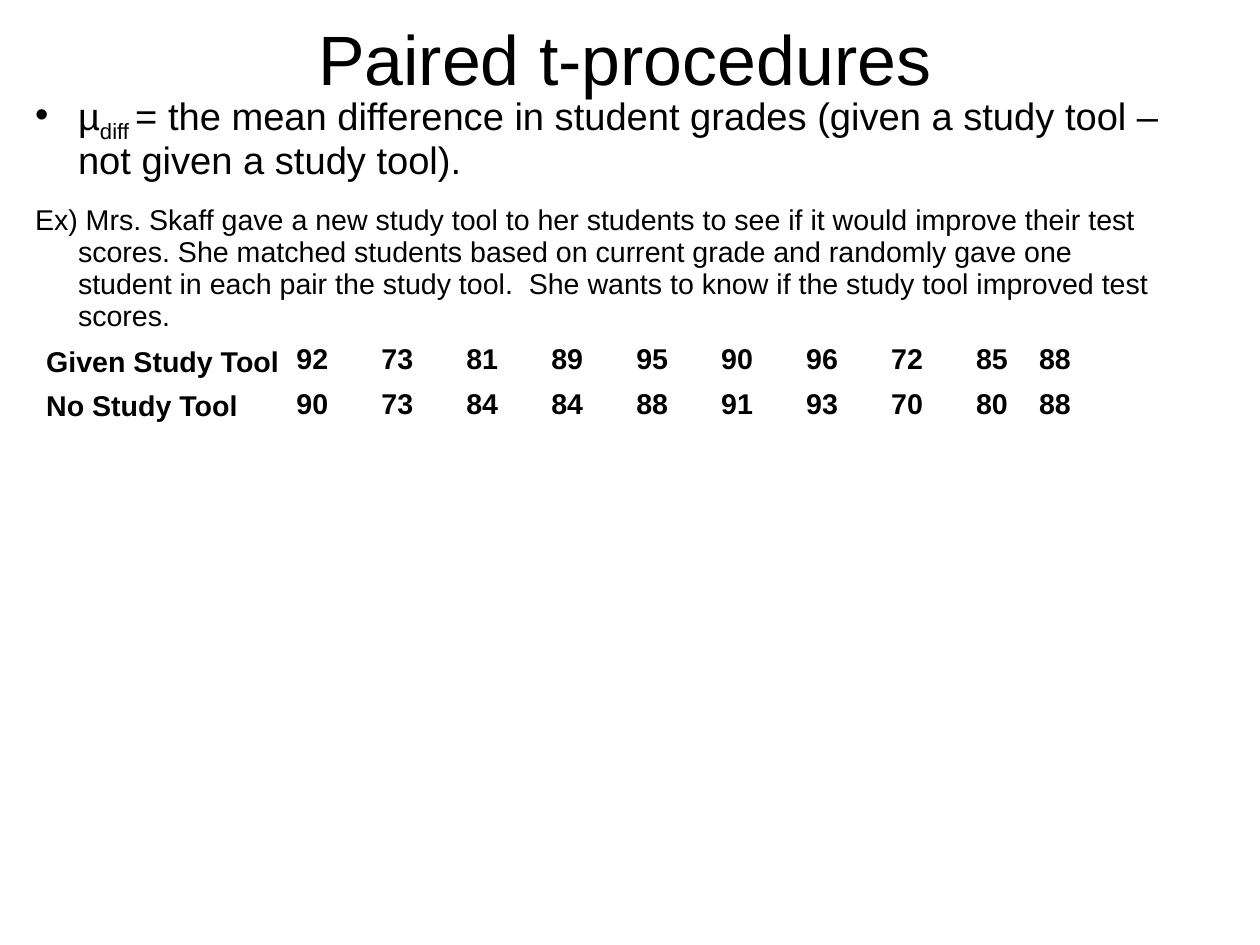
import pptx
import pptx.dml.color
import pptx.enum.text
import pptx.oxml.ns
import pptx.util
import lxml.etree

FONT = "Arial"
BLACK = "000000"
WHITE = "FFFFFF"
LINE_SPACING = 0.93
SCORES = [
    [92, 73, 81, 89, 95, 90, 96, 72, 85, 88],
    [90, 73, 84, 84, 88, 91, 93, 70, 80, 88],
]
COLUMN_WIDTHS = [85] * 8 + [63, 85]
ROW_HEIGHT = 45


def px(length):
    return pptx.util.Emu(length * 8000)


def color(value):
    return pptx.dml.color.RGBColor.from_string(value)


def add_xml(parent, tag, **attributes):
    element = lxml.etree.SubElement(parent, pptx.oxml.ns.qn(tag))
    for name, value in attributes.items():
        element.set(name, str(value))
    return element


def add_text(paragraph, text, size=18, bold=False, baseline=None, fill=BLACK):
    run = paragraph.add_run()
    run.text = text
    run.font.name = FONT
    run.font.size = pptx.util.Pt(size)
    run.font.bold = bold
    run.font.color.rgb = color(fill)
    if baseline is not None:
        run.font._element.set("baseline", str(baseline))


def place(shape, box):
    shape.left, shape.top, shape.width, shape.height = map(px, box)


def set_frame(frame, anchor, top=0):
    frame.word_wrap = True
    frame.auto_size = pptx.enum.text.MSO_AUTO_SIZE.NONE
    frame.vertical_anchor = anchor
    frame.margin_left = frame.margin_right = frame.margin_bottom = 0
    frame.margin_top = px(top)


def set_hanging(paragraph, bullet=None):
    properties = paragraph._p.get_or_add_pPr()
    properties.set("marL", str(px(43)))
    properties.set("indent", str(px(-43)))
    if bullet:
        add_xml(properties, "a:buFont", typeface=FONT)
        add_xml(properties, "a:buChar", char=bullet)
    else:
        add_xml(properties, "a:buNone")
    paragraph.line_spacing = LINE_SPACING
    paragraph.space_before = pptx.util.Pt(0)
    paragraph.space_after = pptx.util.Pt(14.2)


def fill_title(shape, box):
    place(shape, box)
    set_frame(shape.text_frame, pptx.enum.text.MSO_ANCHOR.MIDDLE)
    paragraph = shape.text_frame.paragraphs[0]
    paragraph.alignment = pptx.enum.text.PP_ALIGN.CENTER
    paragraph.line_spacing = LINE_SPACING
    add_text(paragraph, "Paired t-procedures", size=44)


def fill_body(shape, box):
    place(shape, box)
    frame = shape.text_frame
    set_frame(frame, pptx.enum.text.MSO_ANCHOR.TOP, top=3)
    definition = frame.paragraphs[0]
    set_hanging(definition, bullet="•")
    add_text(definition, "µ", size=24)
    add_text(definition, "diff ", size=24, baseline=-25000)
    add_text(definition, "= the mean difference in student grades (given a study tool – "
             "not given a study tool).", size=24)
    example = frame.add_paragraph()
    set_hanging(example)
    add_text(example, "Ex) Mrs. Skaff gave a new study tool to her students to see if it "
             "would improve their test scores. She matched students based on current grade "
             "and randomly gave one student in each pair the study tool.  She wants to know "
             "if the study tool improved test scores.")


def set_borders(cell, bottom_width):
    properties = cell._tc.get_or_add_tcPr()
    for side, width in (("L", 1), ("R", 1), ("T", 1), ("B", bottom_width)):
        line = add_xml(properties, f"a:ln{side}", w=pptx.util.Pt(width))
        add_xml(add_xml(line, "a:solidFill"), "a:srgbClr", val=WHITE)


def add_scores(slide, box):
    table = slide.shapes.add_table(len(SCORES), len(COLUMN_WIDTHS), *map(px, box)).table
    table.first_row = False
    table.horz_banding = False
    for column, width in zip(table.columns, COLUMN_WIDTHS):
        column.width = px(width)
    for row_index, row in enumerate(SCORES):
        table.rows[row_index].height = px(ROW_HEIGHT)
        for column_index, score in enumerate(row):
            cell = table.cell(row_index, column_index)
            set_borders(cell, bottom_width=2 if row_index == 0 else 1)
            if row_index == 0:
                cell.fill.background()
            else:
                cell.fill.solid()
                cell.fill.fore_color.rgb = color(WHITE)
                fill = cell._tc.tcPr.find(pptx.oxml.ns.qn("a:solidFill"))
                add_xml(fill[0], "a:alpha", val=20000)
            paragraph = cell.text_frame.paragraphs[0]
            paragraph.line_spacing = LINE_SPACING
            add_text(paragraph, str(score), bold=True)


def add_row_labels(slide, box):
    frame = slide.shapes.add_textbox(*map(px, box)).text_frame
    frame.word_wrap = True
    for index, label in enumerate(("Given Study Tool", "No Study Tool")):
        paragraph = frame.add_paragraph() if index else frame.paragraphs[0]
        paragraph.line_spacing = pptx.util.Pt(14)
        paragraph.space_before = pptx.util.Pt(14 * index)
        add_text(paragraph, label, bold=True)


def main():
    presentation = pptx.Presentation()
    presentation.slide_width = px(1260)
    presentation.slide_height = px(945)
    slide = presentation.slides.add_slide(presentation.slide_layouts[1])
    fill_title(slide.shapes.title, (58, -17, 1134, 158))
    fill_body(slide.placeholders[1], (35, 89, 1134, 623))
    add_scores(slide, (285, 340, sum(COLUMN_WIDTHS), ROW_HEIGHT * len(SCORES)))
    add_row_labels(slide, (35, 350, 630, 102))
    presentation.save("out.pptx")


if __name__ == "__main__":
    main()
